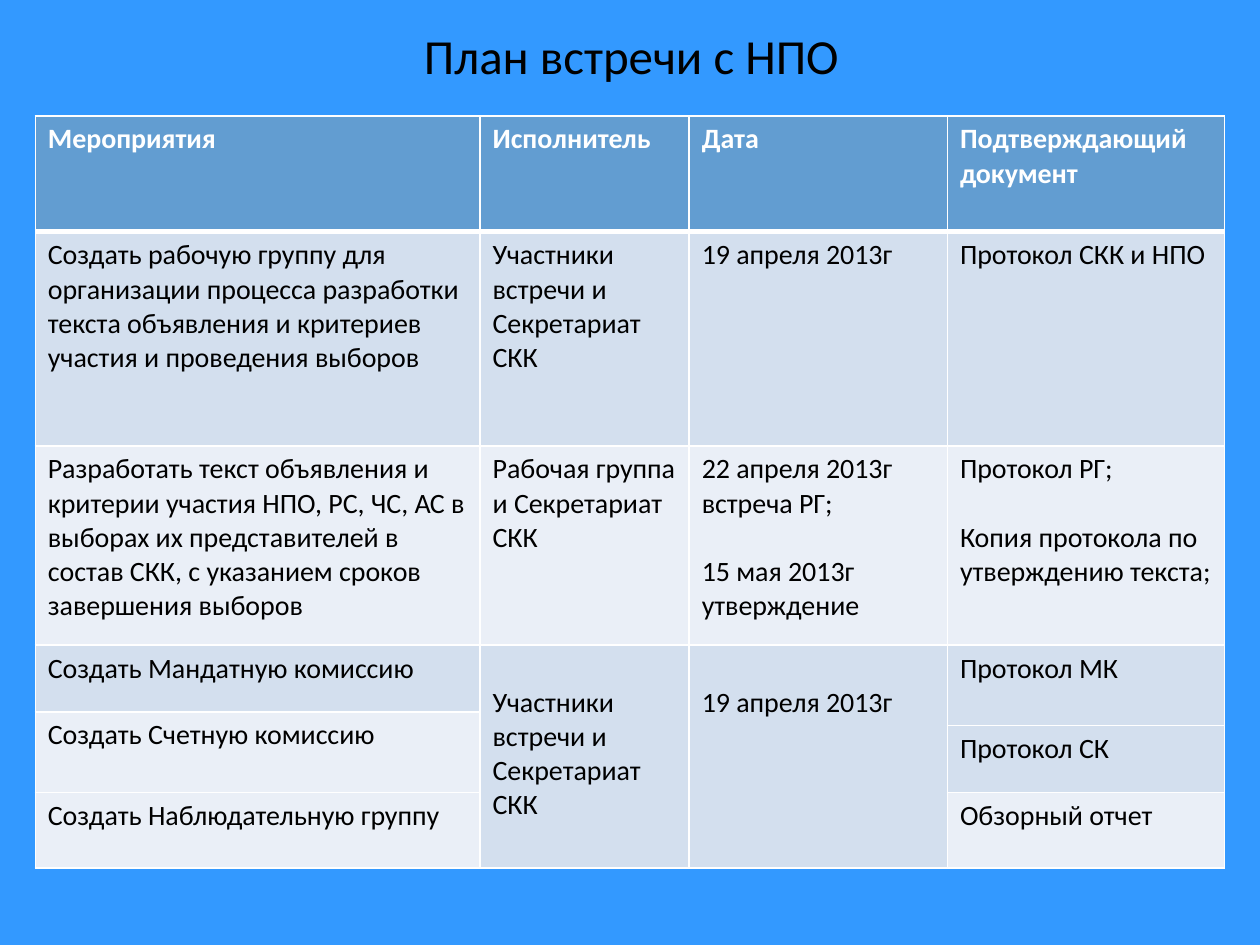
from pptx import Presentation
from pptx.dml.color import RGBColor
from pptx.enum.text import MSO_ANCHOR, PP_ALIGN
from pptx.oxml import parse_xml
from pptx.oxml.ns import nsdecls
from pptx.util import Inches, Pt

WHITE, BLACK, HEADER = "FFFFFF", "000000", "629DD1"
BANDS = ["D3DFEE", "EAEFF7"]
COLUMNS = [3.53, 1.66, 2.05, 2.2]
ROWS = [0.92, 1.7, 1.58, 0.53, 0.11, 0.53, 0.6]
HEADINGS = ["Мероприятия", "Исполнитель", "Дата", "Подтверждающий документ"]
PLAN = [
    (1, 0, 1, 0, "Создать рабочую группу для организации процесса разработки "
                 "текста объявления и критериев участия и проведения выборов"),
    (1, 1, 1, 0, "Участники встречи и Секретариат СКК"),
    (1, 2, 1, 0, "19 апреля 2013г"),
    (1, 3, 1, 0, "Протокол СКК и НПО"),
    (2, 0, 1, 1, "Разработать текст объявления и критерии участия НПО, РС, ЧС, АС в "
                 "выборах их представителей в состав СКК, с указанием сроков завершения выборов"),
    (2, 1, 1, 1, "Рабочая группа и Секретариат СКК"),
    (2, 2, 1, 1, "22 апреля 2013г встреча РГ;\n15 мая 2013г утверждение"),
    (2, 3, 1, 1, "Протокол РГ;\nКопия протокола по утверждению текста;"),
    (3, 0, 1, 0, "Создать Мандатную комиссию"),
    (3, 1, 4, 0, "Участники встречи и Секретариат СКК"),
    (3, 2, 4, 0, "19 апреля 2013г"),
    (3, 3, 2, 0, "Протокол МК"),
    (4, 0, 2, 1, "Создать Счетную комиссию"),
    (5, 3, 1, 0, "Протокол СК"),
    (6, 0, 1, 1, "Создать Наблюдательную группу"),
    (6, 3, 1, 1, "Обзорный отчет"),
]


def color(value):
    return RGBColor.from_string(value)


class SlideBuilder:
    """Holds the text style and the current slide."""

    def __init__(self, page, font="Calibri"):
        self.page = page
        self.font = font

    def background(self, fill):
        self.page.background.fill.solid()
        self.page.background.fill.fore_color.rgb = color(fill)

    def set_text(self, frame, text, size, ink, bold=False, align=PP_ALIGN.LEFT):
        frame.word_wrap = True
        frame.text = text
        for index, para in enumerate(frame.paragraphs):
            para.alignment = align
            if index:
                para.space_before = Pt(19.5)
            for span in para.runs:
                span.font.name = self.font
                span.font.size = Pt(size)
                span.font.bold = bold
                span.font.color.rgb = color(ink)

    def title(self, text, left, top, width, height):
        box = self.page.shapes.add_textbox(
            Inches(left), Inches(top), Inches(width), Inches(height))
        box.text_frame.vertical_anchor = MSO_ANCHOR.MIDDLE
        self.set_text(box.text_frame, text, 28, BLACK, align=PP_ALIGN.CENTER)

    def borders(self, cell, **widths):
        properties = cell._tc.get_or_add_tcPr()
        for side in "LRTB":
            properties.append(parse_xml(
                f'<a:ln{side} {nsdecls("a")} w="{Pt(widths.get(side, 1))}">'
                f'<a:solidFill><a:srgbClr val="{WHITE}"/></a:solidFill></a:ln{side}>'))

    def table(self, left, top, columns, rows):
        table = self.page.shapes.add_table(
            len(rows), len(columns), Inches(left), Inches(top),
            Inches(sum(columns)), Inches(sum(rows))).table
        for column, width in zip(table.columns, columns):
            column.width = Inches(width)
        for index, (row, height) in enumerate(zip(table.rows, rows)):
            row.height = Inches(height)
            for cell in row.cells:
                self.borders(cell, T=3 if index == 1 else 1, B=3 if index == 0 else 1)
        return table

    def cell(self, table, row, column, span, fill, text, ink=BLACK, bold=False):
        cell = table.cell(row, column)
        if span > 1:
            cell.merge(table.cell(row + span - 1, column))
        cell.margin_top = Inches(0.32 if span == 4 else 0.05)
        cell.fill.solid()
        cell.fill.fore_color.rgb = color(fill)
        self.set_text(cell.text_frame, text, 16, ink, bold)


def main():
    deck = Presentation()
    deck.slide_width, deck.slide_height = Inches(10), Inches(7.5)
    builder = SlideBuilder(deck.slides.add_slide(deck.slide_layouts[6]))
    builder.background("3399FF")
    builder.title("План встречи с НПО", 0.51, 0.13, 9, 0.61)
    table = builder.table(0.28, 0.92, COLUMNS, ROWS)
    for column, heading in enumerate(HEADINGS):
        builder.cell(table, 0, column, 1, HEADER, heading, WHITE, True)
    for row, column, span, band, text in PLAN:
        builder.cell(table, row, column, span, BANDS[band], text)
    deck.save("out.pptx")


if __name__ == "__main__":
    main()
